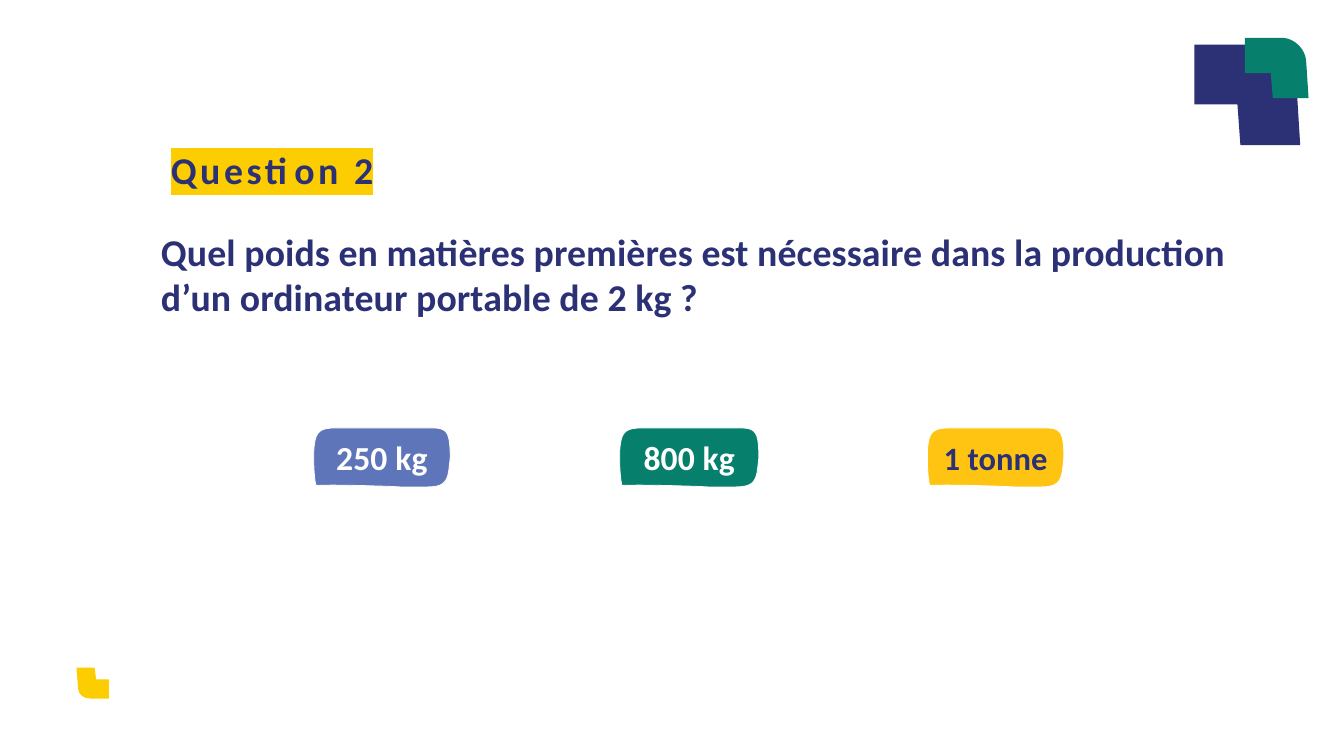
from lxml import etree
from pptx import Presentation
from pptx import util as u
from pptx.dml.color import RGBColor
from pptx.enum import text
from pptx.oxml import ns

NAVY = RGBColor(0x2C, 0x31, 0x76)
GREEN = RGBColor(0x06, 0x80, 0x6C)
YELLOW = RGBColor(0xFC, 0xCD, 0x00)
AMBER = RGBColor(0xFF, 0xC4, 0x12)
BLUE = RGBColor(0x5E, 0x75, 0xBA)
WHITE = RGBColor(0xFF, 0xFF, 0xFF)

HEADING = "Question 2"
QUESTION = ("Quel poids en matières premières est nécessaire dans la production "
            "d’un ordinateur portable de 2 kg ?")
# label, left (cm), width factor, fill, text colour, text size
ANSWERS = [
    ("250 kg", 10.52, 1, BLUE, WHITE, 32),
    ("800 kg", 20.8, 1.02, GREEN, WHITE, 32),
    ("1 tonne", 31.14, 1, AMBER, NAVY, 31),
]
ANSWER_TOP = 14.35

# Outlines in cm: two numbers are a corner, six are a cubic curve
ANSWER_OUTLINE = [
    (4.6, 0.71), (4.62, 1.09, 4.6, 1.07, 4.57, 1.37),
    (4.52, 1.88, 4.34, 2.01, 3.84, 2.01), (2.92, 2.01),
    (2.44, 1.98, 0.64, 1.93, 0.1, 1.96), (0.05, 1.83, 0, 1.22, 0.03, 0.71),
    (0.08, 0.23, 0.15, 0.03, 0.74, 0.03), (4.01, 0.03),
    (4.47, 0.03, 4.57, 0.18, 4.6, 0.71),
]
ORNAMENTS = [
    (YELLOW, [(3.18, 22.43), (2.57, 22.43), (2.62, 23.06),
              (2.62, 23.32, 2.79, 23.47, 3.05, 23.47),
              (3.66, 23.47), (3.66, 22.83), (3.23, 22.83)]),
    (NAVY, [(43.69, 4.88), (43.56, 2.79), (43.51, 2.06, 42.9, 1.5, 42.16, 1.5),
            (40.13, 1.5), (40.13, 3.51), (41.58, 3.51), (41.68, 4.88)]),
    (GREEN, [(43.97, 3.3), (43.89, 2.06), (43.86, 1.63, 43.48, 1.27, 43.05, 1.27),
             (41.83, 1.27), (41.83, 2.46), (42.7, 2.46), (42.77, 3.3)]),
]
CURVE_STEPS = 12


def flatten(outline):
    """Return the outline's points, with each curve cut into short lines."""
    points = [outline[0]]
    for step in outline[1:]:
        if len(step) == 2:
            points.append(step)
            continue
        controls = [points[-1], step[:2], step[2:4], step[4:]]
        for index in range(1, CURVE_STEPS + 1):
            t = index / CURVE_STEPS
            weights = ((1 - t) ** 3, 3 * t * (1 - t) ** 2, 3 * t * t * (1 - t), t ** 3)
            points.append(tuple(sum(w * c[axis] for w, c in zip(weights, controls))
                                for axis in (0, 1)))
    return points


def add_outline(slide, outline, fill, left=0, top=0, stretch=1):
    points = [(u.Cm(left + x * stretch), u.Cm(top + y)) for x, y in flatten(outline)]
    builder = slide.shapes.build_freeform(*points[0])
    builder.add_line_segments(points[1:], close=True)
    shape = builder.convert_to_shape()
    shape.shadow.inherit = False
    shape.fill.solid()
    shape.fill.fore_color.rgb = fill
    shape.line.fill.background()
    return shape


def write(shape, wording, color, size=36, spacing=0.1):
    """Fill the shape with one bold run; spacing is between letters, in points."""
    shape.text_frame.word_wrap = True
    run = shape.text_frame.paragraphs[0].add_run()
    run.text = wording
    for name, value in {"name": "Calibri", "size": u.Pt(size), "bold": True}.items():
        setattr(run.font, name, value)
    run.font.color.rgb = color
    run.font._element.set("spc", str(round(spacing * 100)))
    return run


def highlight(run, color):
    element = etree.Element(ns.qn("a:highlight"))
    etree.SubElement(element, ns.qn("a:srgbClr")).set("val", str(color))
    run.font._element.find(ns.qn("a:solidFill")).addnext(element)


def add_text(slide, box, wording, **style):
    shape = slide.shapes.add_textbox(*map(u.Cm, box))
    for side in ("left", "top", "right", "bottom"):
        setattr(shape.text_frame, f"margin_{side}", 0)
    return write(shape, wording, NAVY, **style)


def main():
    presentation = Presentation()
    presentation.slide_width, presentation.slide_height = u.Cm(45.16), u.Cm(25.4)
    slide = presentation.slides.add_slide(presentation.slide_layouts[6])

    for fill, outline in ORNAMENTS:
        add_outline(slide, outline, fill)

    add_text(slide, (5.41, 7.67, 38, 3.07), QUESTION)
    heading = add_text(slide, (5.74, 4.93, 16.84, 1.57), HEADING, spacing=3.4)
    highlight(heading, YELLOW)

    for label, left, stretch, fill, color, size in ANSWERS:
        shape = add_outline(slide, ANSWER_OUTLINE, fill, left, ANSWER_TOP, stretch)
        shape.line.color.rgb = WHITE
        shape.line.width = u.Pt(0.75)
        shape.text_frame.vertical_anchor = text.MSO_ANCHOR.MIDDLE
        shape.text_frame.paragraphs[0].alignment = text.PP_ALIGN.CENTER
        write(shape, label, color, size)

    presentation.save("out.pptx")


if __name__ == "__main__":
    main()
